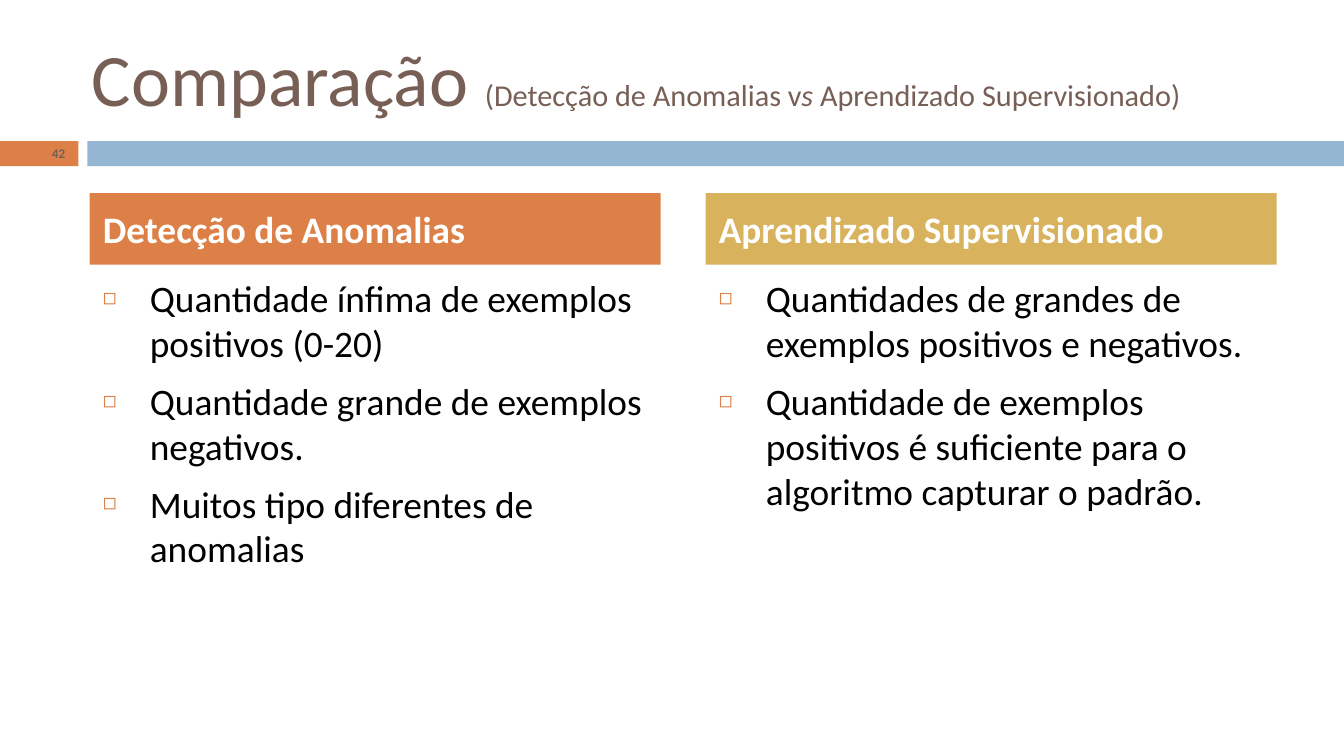
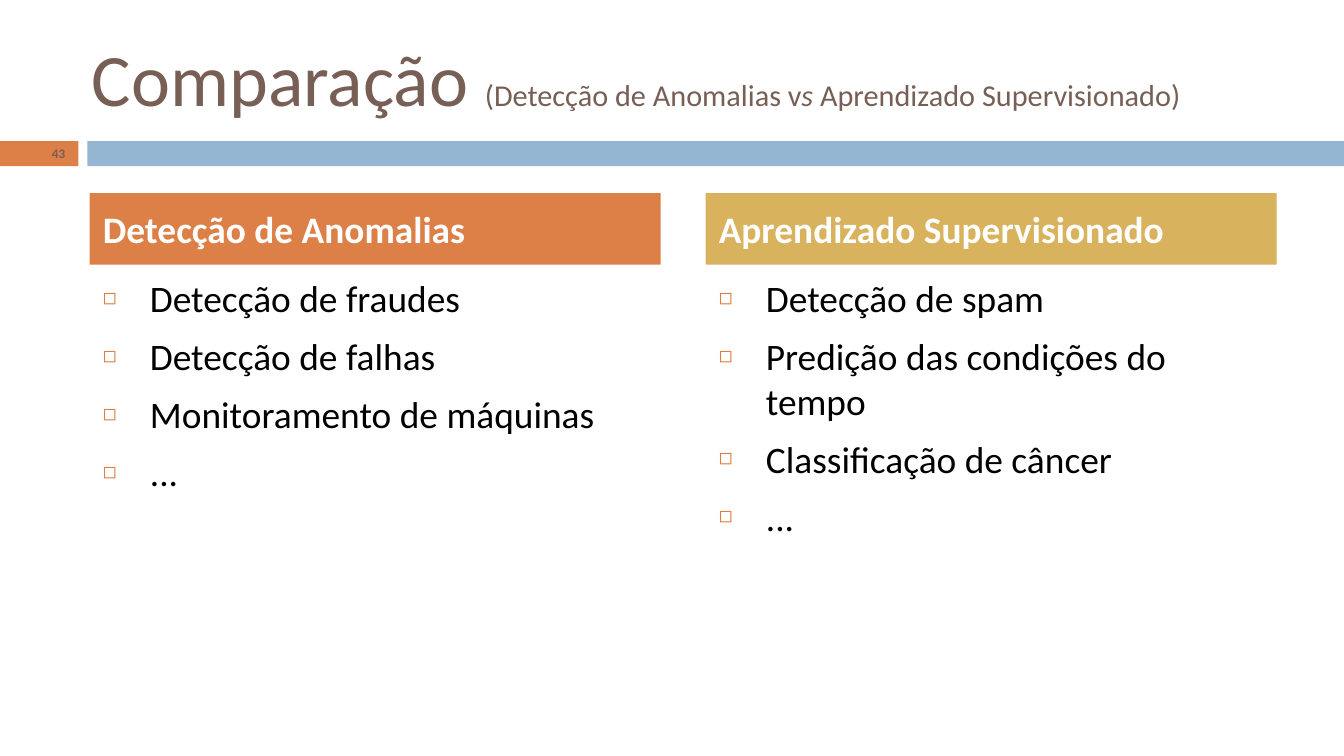
from pptx import Presentation
from pptx.dml.color import RGBColor
from pptx.enum.shapes import MSO_SHAPE
from pptx.enum.text import MSO_ANCHOR, MSO_AUTO_SIZE, PP_ALIGN
from pptx.oxml.ns import qn
from pptx.util import Inches, Pt
from lxml.etree import SubElement

WIDE, HIGH = Inches(10), Inches(5.625)
COL, ROW = WIDE / 120, HIGH / 90
FONT = "Calibri"
HUES = {"orange": "DD8047", "blue": "94B6D2", "gold": "D8B25C",
        "brown": "775F55", "white": "FFFFFF", "black": "000000"}

TITLE = [("Comparação ", 39.6, False), ("(Detecção de Anomalias v", 16.2, False),
         ("s", 16.2, True), (" Aprendizado Supervisionado)", 16.2, False)]
HEADS = [("Detecção de Anomalias", "orange"), ("Aprendizado Supervisionado", "gold")]
PAGES = [
    (42, [["Quantidade ínfima de exemplos positivos (0-20)",
           "Quantidade grande de exemplos negativos.",
           "Muitos tipo diferentes de anomalias"],
          ["Quantidades de grandes de exemplos positivos e negativos.",
           "Quantidade de exemplos positivos é suficiente para o algoritmo capturar o padrão."]]),
    (43, [["Detecção de fraudes", "Detecção de falhas", "Monitoramento de máquinas", "..."],
          ["Detecção de spam", "Predição das condições do tempo",
           "Classificação de câncer", "..."]]),
]


def place(box):
    """Turn a box of columns and rows into slide lengths."""
    x, y, w, h = box
    return int(x * COL), int(y * ROW), int(w * COL), int(h * ROW)


def style(run, size, hue, bold=False, slant=False):
    """Set the font of one run."""
    font = run.font
    font.name, font.size, font.bold, font.italic = FONT, Pt(size), bold, slant
    font.color.rgb = RGBColor.from_string(HUES[hue])


def bar(slide, box, hue):
    """Draw a plain filled bar."""
    shape = slide.shapes.add_shape(MSO_SHAPE.RECTANGLE, *place(box))
    shape.shadow.inherit = False
    shape.fill.solid()
    shape.fill.fore_color.rgb = RGBColor.from_string(HUES[hue])
    shape.line.fill.background()
    return shape


def label(shape, text, size, hue, align, gap=0):
    """Write one bold line, centred in height, into a shape."""
    frame = shape.text_frame
    frame.text = text
    frame.word_wrap = True
    frame.vertical_anchor = MSO_ANCHOR.MIDDLE
    line = frame.paragraphs[0]
    line.alignment, line.space_before = align, Pt(gap)
    style(line.runs[0], size, hue, bold=True)


def bullet(line):
    """Give a paragraph a small hollow square and a hanging indent."""
    props = line._p.get_or_add_pPr()
    props.set("marL", str(Inches(0.35)))
    props.set("indent", str(-Inches(0.35)))
    tint = SubElement(props, qn("a:buClr"))
    SubElement(tint, qn("a:srgbClr"), val=HUES["orange"])
    SubElement(props, qn("a:buSzPct"), val="60000")
    SubElement(props, qn("a:buFont"), typeface=FONT)
    SubElement(props, qn("a:buChar"), char="◻")


def header(slide, box):
    """Format the title placeholder and its mixed runs."""
    title = slide.shapes.title
    title.left, title.top, title.width, title.height = place(box)
    frame = title.text_frame
    frame.auto_size = MSO_AUTO_SIZE.NONE
    frame.vertical_anchor = MSO_ANCHOR.MIDDLE
    line = frame.paragraphs[0]
    line.alignment = PP_ALIGN.LEFT
    for text, size, slant in TITLE:
        run = line.add_run()
        run.text = text
        style(run, size, "brown", slant=slant)


def band(slide, box, page):
    """Draw the two-colour band with the page number."""
    x, y, w, h = box
    tab, gap = 7, 0.8
    mark = bar(slide, (x, y, tab, h), "orange")
    bar(slide, (x + tab + gap, y, w - tab - gap, h), "blue")
    label(mark, str(page), 7, "brown", PP_ALIGN.RIGHT)


def panel(slide, box, head, items):
    """Stack a coloured heading over a bulleted list."""
    x, y, w, h = box
    text, hue = head
    label(bar(slide, (x, y, w, 8.5), hue), text, 20, "white", PP_ALIGN.LEFT, gap=7)
    body = slide.shapes.add_textbox(*place((x, y + 9, w, h - 9)))
    frame = body.text_frame
    frame.word_wrap = True
    frame.text = "\n".join(items)
    for line in frame.paragraphs:
        line.space_before = Pt(7)
        bullet(line)
        style(line.runs[0], 20, "black")


def compare(deck, page, lists):
    """Build one comparison slide."""
    slide = deck.slides.add_slide(deck.slide_layouts[5])
    header(slide, (7, 3.5, 107, 11.4))
    band(slide, (0, 16.8, 120, 3), page)
    wide, gap = 51, 4
    for i, (head, items) in enumerate(zip(HEADS, lists)):
        panel(slide, (8 + i * (wide + gap), 23, wide, 56), head, items)


def main():
    """Build and save the deck."""
    deck = Presentation()
    deck.slide_width, deck.slide_height = WIDE, HIGH
    for page, lists in PAGES:
        compare(deck, page, lists)
    deck.save("out.pptx")


if __name__ == "__main__":
    main()
